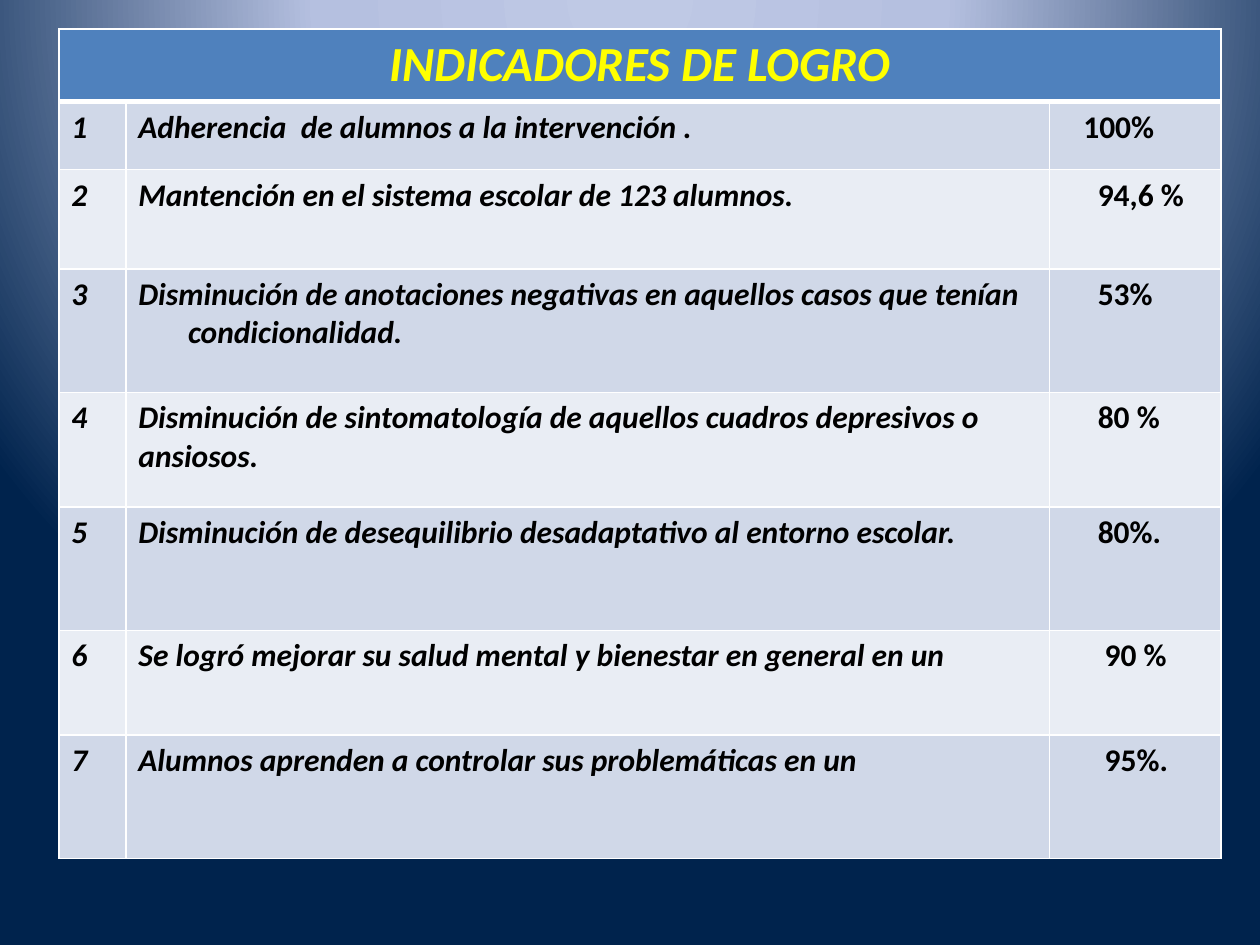
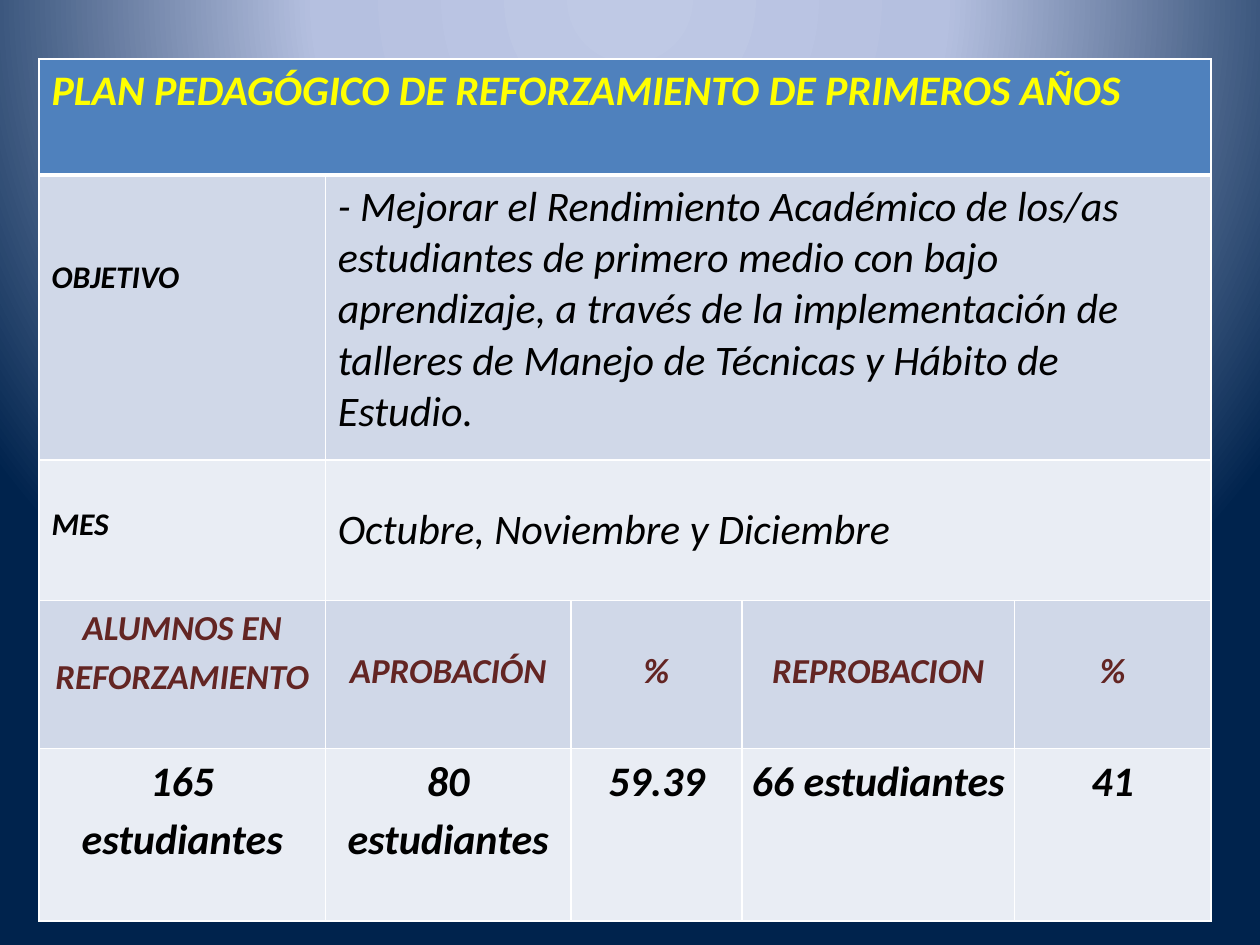
from dataclasses import dataclass

from lxml import etree
from pptx import Presentation
from pptx.dml.color import RGBColor as Rgb
from pptx.enum.text import PP_ALIGN as Align
from pptx.oxml.ns import qn
from pptx.util import Cm, Pt

A = "http://schemas.openxmlformats.org/drawingml/2006/main"


@dataclass(frozen=True)
class Theme:
    font: str = "Calibri"
    ink: str = "000000"
    heading: str = "FFFF00"
    label: str = "632523"
    header: str = "4F81BD"
    bands: tuple = ("D0D8E8", "E9EDF4")
    border: str = "FFFFFF"
    backdrop: tuple = ((0, "BFC9E5"), (40, "B5C0E0"), (100, "00234D"))
    banner_size: int = 28
    large: int = 24
    medium: int = 20
    small: int = 18


theme = Theme()


def write(cell, text, size=theme.small, color=theme.ink, bold=True, italic=True,
          align=Align.LEFT, spacing=1.0, left=0.25, right=0.25, top=0.13,
          bottom=0.13, hanging=0):
    cell.margin_left, cell.margin_right = Cm(left), Cm(right)
    cell.margin_top, cell.margin_bottom = Cm(top), Cm(bottom)
    paragraph = cell.text_frame.paragraphs[0]
    paragraph.alignment = align
    paragraph.line_spacing = spacing
    if hanging:
        properties = paragraph._p.get_or_add_pPr()
        properties.set("marL", str(Cm(hanging)))
        properties.set("indent", str(-Cm(hanging)))
    run = paragraph.add_run()
    run.text = text
    run.font.name = theme.font
    run.font.size = Pt(size)
    run.font.bold = bold
    run.font.italic = italic
    run.font.color.rgb = Rgb.from_string(color)


def add_grid(slide, left, top, widths, heights):
    grid = slide.shapes.add_table(
        len(heights), len(widths), Cm(left), Cm(top),
        Cm(sum(widths)), Cm(sum(heights))).table
    grid.first_row = grid.horz_banding = False
    for column, width in zip(grid.columns, widths):
        column.width = Cm(width)
    for index, (row, height) in enumerate(zip(grid.rows, heights)):
        row.height = Cm(height)
        for cell in row.cells:
            properties = cell._tc.get_or_add_tcPr()
            for edge in "LRTB":
                thick = (index, edge) in ((0, "B"), (1, "T"))
                line = etree.SubElement(properties, f"{{{A}}}ln{edge}",
                                        w=str(Pt(3 if thick else 1)))
                paint = etree.SubElement(line, f"{{{A}}}solidFill")
                etree.SubElement(paint, f"{{{A}}}srgbClr", val=theme.border)
            cell.fill.solid()
            shade = theme.bands[(index - 1) % 2] if index else theme.header
            cell.fill.fore_color.rgb = Rgb.from_string(shade)
    grid.cell(0, 0).merge(grid.cell(0, len(widths) - 1))
    return grid


deck = Presentation()
deck.slide_width, deck.slide_height = Cm(25.4), Cm(19.05)
blank = deck.slide_layouts[6]

stops = "".join(f'<a:gs pos="{position * 1000}"><a:srgbClr val="{color}"/></a:gs>'
                for position, color in theme.backdrop)
deck.slide_master.background.fill.solid()
backdrop = next(deck.slide_master.element.iter(qn("p:bgPr")))
backdrop.remove(backdrop[0])
backdrop.insert(0, etree.fromstring(
    f'<a:gradFill xmlns:a="{A}" rotWithShape="1"><a:gsLst>{stops}</a:gsLst>'
    '<a:path path="circle"><a:fillToRect l="50000" t="-80000" r="50000" b="180000"/>'
    '</a:path></a:gradFill>'))

achievements = [
    ("Adherencia  de alumnos a la intervención .", "100%", 0.43),
    ("Mantención en el sistema escolar de 123 alumnos.", "94,6 %", 0.72),
    ("Disminución de anotaciones negativas en aquellos casos que tenían "
     "condicionalidad.", "53%", 0.72),
    ("Disminución de sintomatología de aquellos cuadros depresivos o ansiosos.",
     "80 %", 0.72),
    ("Disminución de desequilibrio desadaptativo al entorno escolar.", "80%.", 0.72),
    ("Se logró mejorar su salud mental y bienestar en general en un", "90 %", 0.86),
    ("Alumnos aprenden a controlar sus problemáticas en un", "95%.", 0.86),
]
indicators = add_grid(deck.slides.add_slide(blank), 1.19, 0.58, (1.35, 18.62, 3.45),
                      (1.45, 1.37, 2, 2.49, 2.31, 2.49, 2.11, 2.49))
write(indicators.cell(0, 0), "INDICADORES DE LOGRO", size=theme.banner_size,
      color=theme.heading, align=Align.CENTER)
for number, (achievement, rate, indent) in enumerate(achievements, 1):
    write(indicators.cell(number, 0), str(number))
    write(indicators.cell(number, 1), achievement, hanging=1 if number == 3 else 0)
    write(indicators.cell(number, 2), rate, italic=False, left=0.25 + indent, right=0.1)

plan = add_grid(deck.slides.add_slide(blank), 0.79, 1.19,
                (5.77, 4.95, 3.45, 5.49, 3.96), (2.34, 5.74, 2.84, 2.98, 3.48))
write(plan.cell(0, 0), "PLAN PEDAGÓGICO DE REFORZAMIENTO DE PRIMEROS AÑOS",
      size=theme.large, color=theme.heading)

details = [
    ("OBJETIVO", 1.68,
     "- Mejorar el Rendimiento Académico de los/as estudiantes de primero medio con "
     "bajo aprendizaje, a través de la implementación de talleres de Manejo de "
     "Técnicas y Hábito de Estudio.", 0.13),
    ("MES", 0.91, "Octubre, Noviembre y Diciembre", 0.91),
]
for row, (topic, topic_top, detail, detail_top) in enumerate(details, 1):
    plan.cell(row, 1).merge(plan.cell(row, 4))
    write(plan.cell(row, 0), topic, top=topic_top)
    write(plan.cell(row, 1), detail, size=theme.large, bold=False, top=detail_top)

results = [
    ("ALUMNOS EN REFORZAMIENTO", "165 estudiantes"),
    ("APROBACIÓN", "80 estudiantes"),
    ("%", "59.39"),
    ("REPROBACION", "66 estudiantes"),
    ("%", "41"),
]
centred = dict(align=Align.CENTER, spacing=1.15, left=0.18, right=0.18, bottom=0)
for column, (measure, outcome) in enumerate(results):
    write(plan.cell(3, column), measure, size=theme.medium, color=theme.label,
          top=0.86 if column else 0, **centred)
    write(plan.cell(4, column), outcome, size=theme.large, top=0, **centred)

deck.save("out.pptx")
